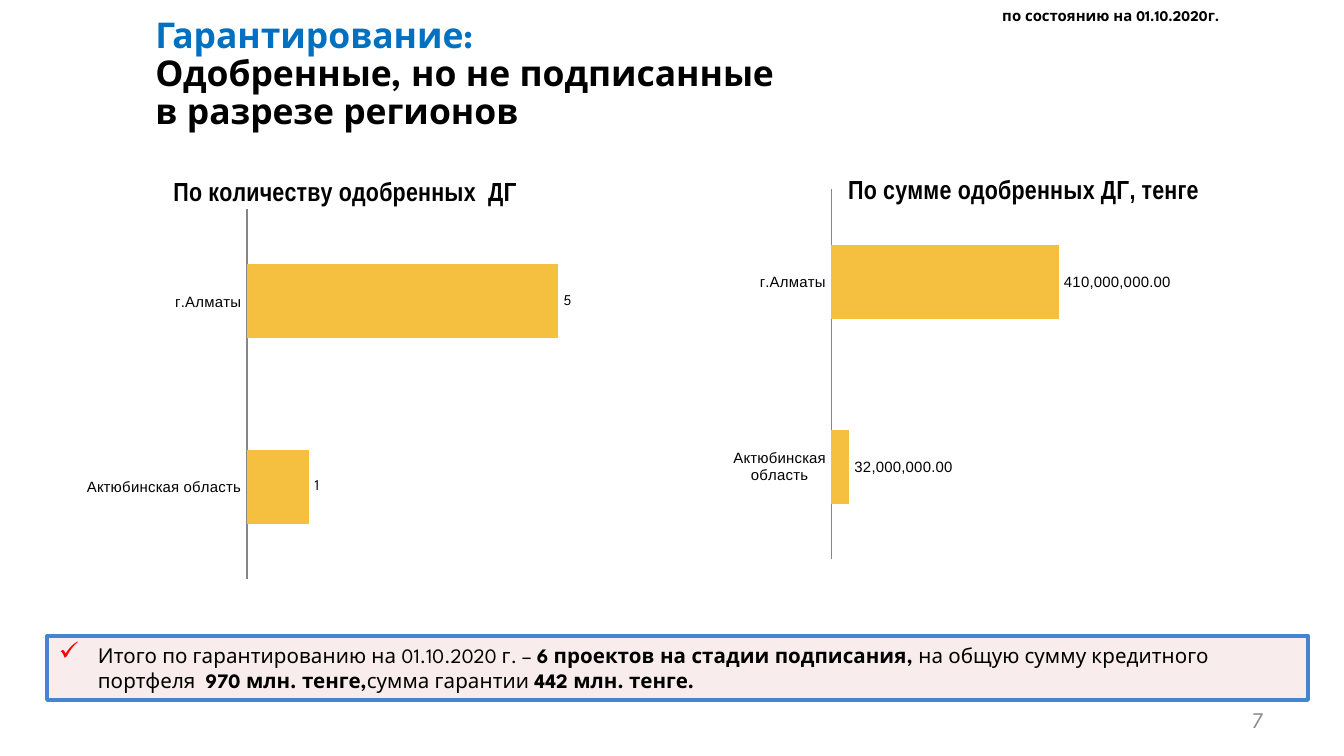
from dataclasses import dataclass

from lxml.etree import SubElement
from pptx import Presentation
from pptx.chart.data import CategoryChartData
from pptx.dml.color import RGBColor
from pptx.enum.chart import XL_CHART_TYPE as ChartType
from pptx.enum.chart import XL_LABEL_POSITION as LabelPosition
from pptx.enum.chart import XL_TICK_MARK as TickMark
from pptx.enum.shapes import MSO_SHAPE as Preset
from pptx.enum.text import MSO_ANCHOR as Anchor
from pptx.enum.text import PP_ALIGN as Align
from pptx.oxml.ns import qn
from pptx.util import Emu, Pt

EMU_PER_PX = 914400 / 134.4
BRAND_FONT, AXIS_FONT, CHART_TITLE_FONT = "League Spartan", "Arial", "Arial Narrow"
BLACK, BLUE, GREY = "000000", "0070C0", "8C8C8C"
BAR, AXIS, RED = "F5C040", "868686", "FF0000"
PANEL_FILL, PANEL_LINE = "F2DCDB", "4584D3"
REGIONS = ("Актюбинская область", "г.Алматы")


@dataclass(frozen=True)
class Box:
    left: int
    top: int
    width: int
    height: int


@dataclass(frozen=True)
class Span:
    text: str
    bold: bool = False
    color: str = BLACK


@dataclass(frozen=True)
class RegionChart:
    title: str
    box: Box
    values: tuple[int, ...]
    axis_max: int
    number_format: str
    label_font: str
    title_at: dict[str, float]
    plot_at: dict[str, float]


CHARTS = (
    RegionChart("По количеству одобренных  ДГ", Box(42, 156, 603, 441),
                (1, 5), 6, "General", BRAND_FONT,
                {"x": 0.21, "y": 0.04},
                {"x": 0.34, "y": 0.12, "w": 0.62, "h": 0.84}),
    RegionChart("По сумме одобренных ДГ, тенге", Box(683, 159, 594, 435),
                (32_000_000, 410_000_000), 450_000_000, "#,##0.00", AXIS_FONT,
                {"x": 0.27, "y": 0.03},
                {"x": 0.25, "y": 0.07, "w": 0.42, "h": 0.85}),
)
HEADING = (
    (Span("Гарантирование: ", True, BLUE),),
    (Span("Одобренные, но не подписанные ", True),),
    (Span("в разрезе регионов", True),),
)
SUMMARY = (
    Span("Итого по гарантированию на 01.10.2020 г. – "),
    Span("6 проектов на стадии подписания, ", True),
    Span("на общую сумму кредитного портфеля  "),
    Span("970 млн. тенге,", True),
    Span("сумма гарантии "),
    Span("442 млн. тенге.", True),
)


def px(length: int) -> Emu:
    return Emu(round(length * EMU_PER_PX))


def place(box: Box) -> tuple[Emu, Emu, Emu, Emu]:
    return px(box.left), px(box.top), px(box.width), px(box.height)


def rgb(color: str) -> RGBColor:
    return RGBColor.from_string(color)


def style_font(font, size: int, name: str = BRAND_FONT, color: str = BLACK,
               bold: bool = False) -> None:
    font.size, font.name, font.bold = Pt(size), name, bold
    font.color.rgb = rgb(color)


def add_spans(paragraph, spans: tuple[Span, ...], size: int) -> None:
    for span in spans:
        run = paragraph.add_run()
        run.text = span.text
        style_font(run.font, size, color=span.color, bold=span.bold)


def add_label(slide, box: Box, span: Span, size: int, align: Align,
              anchor: Anchor) -> None:
    frame = slide.shapes.add_textbox(*place(box)).text_frame
    frame.word_wrap = True
    frame.vertical_anchor = anchor
    frame.paragraphs[0].alignment = align
    add_spans(frame.paragraphs[0], (span,), size)


def fill_heading(title) -> None:
    title.left, title.top, title.width, title.height = place(Box(142, 50, 1210, 93))
    frame = title.text_frame
    frame.word_wrap = True
    frame.vertical_anchor = Anchor.MIDDLE
    frame.margin_bottom = px(50)
    paragraph = frame.paragraphs[0]
    paragraph.alignment = Align.LEFT
    paragraph.line_spacing = 0.9
    for index, spans in enumerate(HEADING):
        if index:
            paragraph.add_line_break()
        add_spans(paragraph, spans, 19)


def add_check_bullet(paragraph) -> None:
    properties = paragraph._p.get_or_add_pPr()
    properties.set("marL", str(px(40)))
    properties.set("indent", str(-px(39)))
    SubElement(SubElement(properties, qn("a:buClr")), qn("a:srgbClr"), val=RED)
    SubElement(properties, qn("a:buSzPct"), val="125000")
    SubElement(properties, qn("a:buChar"), char="✓")


def add_summary(slide) -> None:
    panel = slide.shapes.add_shape(Preset.RECTANGLE, *place(Box(47, 636, 1261, 64)))
    panel.shadow.inherit = False
    panel.fill.solid()
    panel.fill.fore_color.rgb = rgb(PANEL_FILL)
    fill_color = panel._element.spPr.find(qn("a:solidFill"))[0]
    SubElement(fill_color, qn("a:alpha"), val="50000")
    panel.line.color.rgb = rgb(PANEL_LINE)
    panel.line.width = Pt(2)

    frame = panel.text_frame
    frame.word_wrap = True
    frame.vertical_anchor = Anchor.MIDDLE
    frame.margin_left = frame.margin_right = px(11)
    frame.margin_top = frame.margin_bottom = px(5)
    paragraph = frame.paragraphs[0]
    paragraph.alignment = Align.LEFT
    paragraph.space_after = Pt(6)
    add_check_bullet(paragraph)
    add_spans(paragraph, SUMMARY, 11)


def set_layout(parent, fractions: dict[str, float], inner: bool = False) -> None:
    """Position a chart part by fractions of the chart area."""
    layout = parent.find(qn("c:layout"))
    if layout is None:
        layout = parent.makeelement(qn("c:layout"))
        parent.insert(0, layout)
    manual = SubElement(layout, qn("c:manualLayout"))
    if inner:
        SubElement(manual, qn("c:layoutTarget"), val="inner")
    for side in "xy":
        SubElement(manual, qn(f"c:{side}Mode"), val="edge")
    for side, fraction in fractions.items():
        SubElement(manual, qn(f"c:{side}"), val=str(fraction))


def add_region_chart(slide, spec: RegionChart) -> None:
    data = CategoryChartData(number_format=spec.number_format)
    data.categories = REGIONS
    data.add_series("Series 1", spec.values)
    chart = slide.shapes.add_chart(ChartType.BAR_CLUSTERED, *place(spec.box), data).chart
    style_font(chart.font, 10)
    chart.has_legend = False

    heading = chart.chart_title.text_frame.paragraphs[0].add_run()
    heading.text = spec.title
    style_font(heading.font, 14, CHART_TITLE_FONT, bold=True)
    set_layout(chart.chart_title._element, spec.title_at)
    set_layout(chart._chartSpace.chart.plotArea, spec.plot_at, inner=True)

    regions, amounts = chart.category_axis, chart.value_axis
    regions.major_tick_mark = regions.minor_tick_mark = TickMark.NONE
    regions.format.line.color.rgb = rgb(AXIS)
    style_font(regions.tick_labels.font, 8, AXIS_FONT)
    amounts.minimum_scale, amounts.maximum_scale = 0, spec.axis_max
    amounts.has_major_gridlines = False
    amounts.visible = False

    plot = chart.plots[0]
    plot.gap_width = 150
    plot.vary_by_categories = False
    bars = plot.series[0]
    bars.format.fill.solid()
    bars.format.fill.fore_color.rgb = rgb(BAR)
    labels = bars.data_labels
    labels.show_value = True
    labels.position = LabelPosition.OUTSIDE_END
    labels.number_format = spec.number_format
    labels.number_format_is_linked = False
    style_font(labels.font, 8, spec.label_font)


def main() -> None:
    deck = Presentation()
    deck.slide_width, deck.slide_height = px(1344), px(756)
    slide = deck.slides.add_slide(deck.slide_layouts[5])
    fill_heading(slide.shapes.title)
    add_label(slide, Box(964, 700, 313, 40), Span("7", color=GREY), 12,
              Align.RIGHT, Anchor.MIDDLE)
    add_label(slide, Box(989, 0, 306, 32), Span("по состоянию на 01.10.2020г.", True), 8,
              Align.LEFT, Anchor.TOP)
    add_summary(slide)
    for spec in CHARTS:
        add_region_chart(slide, spec)
    deck.save("out.pptx")


if __name__ == "__main__":
    main()
